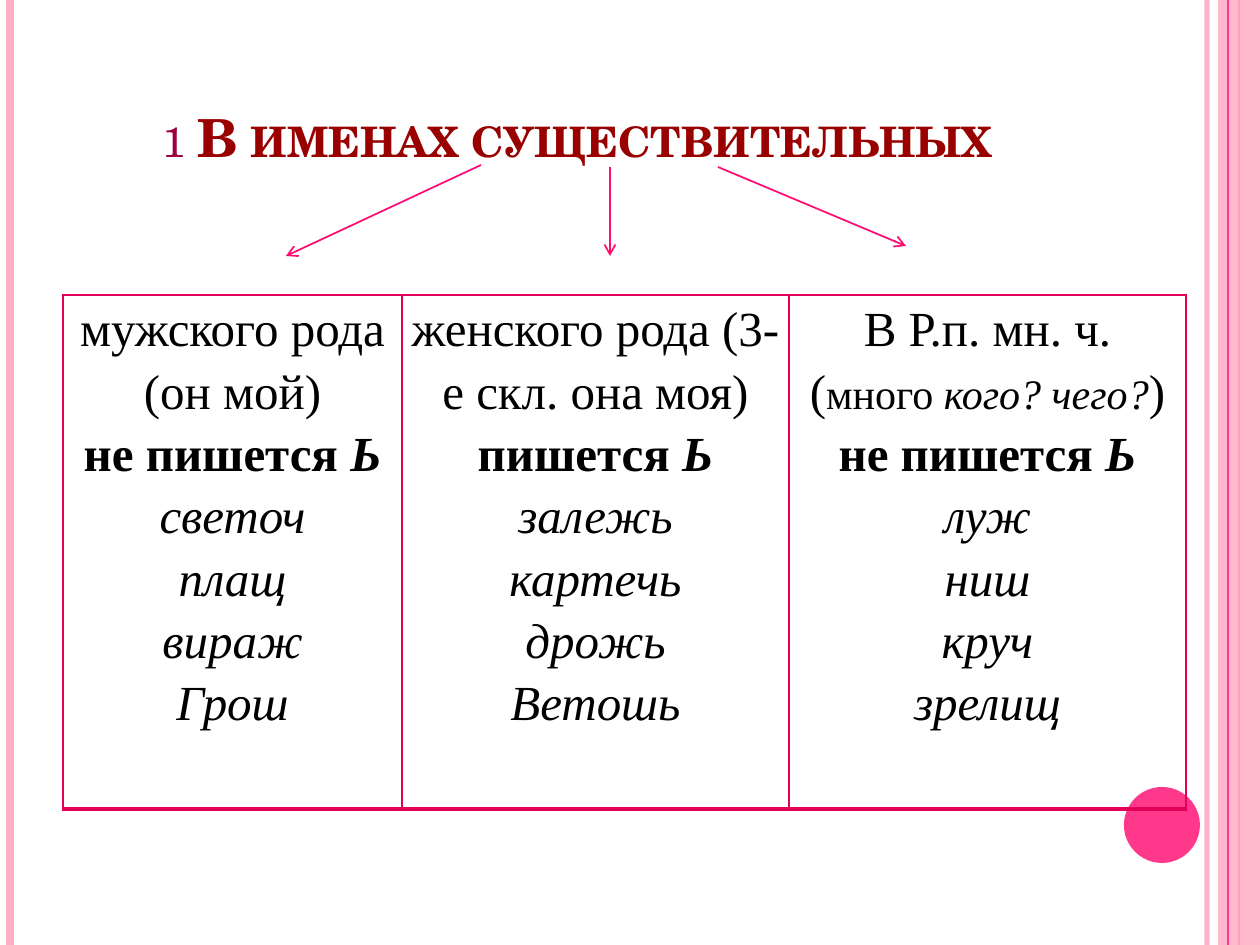
"""Build a slide on the soft sign after sibilants in Russian nouns."""
from dataclasses import dataclass

import pptx
import pptx.dml.color
import pptx.enum.shapes
import pptx.enum.text
import pptx.oxml
import pptx.oxml.ns
import pptx.util

EMU_PER_PX = 914400 / 126
SLIDE_WIDTH, SLIDE_HEIGHT = 1260, 945
COLORS = {
    "pale": "FFAFC5",
    "pink": "FF388C",
    "arrow": "FF0B72",
    "border": "E40059",
    "number": "9C0042",
    "title": "990000",
    "text": "000000",
}
TITLE_FONT, BODY_FONT = "TeX Gyre Schola", "Times New Roman"
CENTER = pptx.enum.text.PP_ALIGN.CENTER


@dataclass(frozen=True)
class Line:
    start: tuple[int, int]
    end: tuple[int, int]
    color: str
    width: float
    opacity: int = 100
    arrow: bool = False


@dataclass(frozen=True)
class Panel:
    kind: pptx.enum.shapes.MSO_SHAPE
    box: tuple[int, int, int, int]
    color: str
    opacity: int = 100


@dataclass(frozen=True)
class Span:
    text: str
    size: int = 28
    bold: bool = False
    italic: bool = False
    color: str = "text"
    font: str = BODY_FONT
    small_caps: bool = False


@dataclass(frozen=True)
class Column:
    width: int
    heading: list[list[Span]]
    rule: str
    examples: list[str]

    def paragraphs(self) -> list[list[Span]]:
        rule = [Span(self.rule, bold=True), Span("Ь", bold=True, italic=True)]
        return [*self.heading, rule, *([Span(word, italic=True)] for word in self.examples)]


def vertical(x: int, color: str, width: float, opacity: int = 100) -> Line:
    return Line((x, 0), (x, SLIDE_HEIGHT), color, width, opacity)


BACKGROUND = [
    vertical(1207, "pale", 3, 93),
    vertical(10, "pale", 4.5),
    vertical(1239, "pink", 1.5),
    Panel(pptx.enum.shapes.MSO_SHAPE.RECTANGLE, (1218, 0, 42, SLIDE_HEIGHT), "pale", 87),
    vertical(1228, "pink", 0.75),
    Panel(pptx.enum.shapes.MSO_SHAPE.OVAL, (1124, 787, 76, 76), "pink"),
]
TITLE = [
    Span("1 ", 30, color="number", font=TITLE_FONT, small_caps=True),
    Span("В именах существительных", 30, True, color="title", font=TITLE_FONT, small_caps=True),
]
COLUMNS = [
    Column(339, [[Span("мужского рода")], [Span("(он мой)")]], "не пишется ",
           ["светоч", "плащ", "вираж", "Грош"]),
    Column(387, [[Span("женского рода (3-е скл. она моя)")]], "пишется ",
           ["залежь", "картечь", "дрожь", "Ветошь"]),
    Column(397, [[Span("В Р.п. мн. ч.")],
                 [Span("("), Span("много ", 24), Span("кого? чего?", 24, italic=True), Span(")")]],
           "не пишется ", ["луж", "ниш", "круч", "зрелищ"]),
]
ARROWS = [
    Line((481, 165), (286, 256), "arrow", 1, arrow=True),
    Line((610, 167), (610, 256), "arrow", 1, arrow=True),
    Line((718, 167), (906, 246), "arrow", 1, arrow=True),
]


def px(*lengths: int) -> list[pptx.util.Emu]:
    return [pptx.util.Emu(round(length * EMU_PER_PX)) for length in lengths]


def rgb(color: str) -> pptx.dml.color.RGBColor:
    return pptx.dml.color.RGBColor.from_string(COLORS[color])


def add_child(parent, tag: str, **attributes: str):
    child = pptx.oxml.ns.qn(tag)
    element = parent.makeelement(child, attributes)
    parent.append(element)
    return element


def paint(fill, color: str, opacity: int) -> None:
    fill.solid()
    fill.fore_color.rgb = rgb(color)
    if opacity < 100:
        color_element = fill._xPr.find(".//" + pptx.oxml.ns.qn("a:srgbClr"))
        add_child(color_element, "a:alpha", val=str(opacity * 1000))


def add_line(slide, line: Line) -> None:
    connector = slide.shapes.add_connector(
        pptx.enum.shapes.MSO_CONNECTOR.STRAIGHT, *px(*line.start, *line.end))
    connector.line.width = pptx.util.Pt(line.width)
    paint(connector.line.fill, line.color, line.opacity)
    if line.arrow:
        add_child(connector.line._get_or_add_ln(), "a:tailEnd", type="arrow")
    add_child(connector._element.spPr, "a:effectLst")


def add_panel(slide, panel: Panel) -> None:
    shape = slide.shapes.add_shape(panel.kind, *px(*panel.box))
    shape.shadow.inherit = False
    paint(shape.fill, panel.color, panel.opacity)
    shape.line.fill.background()


def write_paragraph(paragraph, spans: list[Span]) -> None:
    paragraph.alignment = CENTER
    for span in spans:
        run = paragraph.add_run()
        run.text = span.text
        run.font.name = span.font
        run.font.size = pptx.util.Pt(span.size)
        run.font.bold, run.font.italic = span.bold, span.italic
        run.font.color.rgb = rgb(span.color)
        if span.small_caps:
            run._r.get_or_add_rPr().set("cap", "small")


def add_title(slide, spans: list[Span]) -> None:
    frame = slide.shapes.add_textbox(*px(63, 38, 1029, 136)).text_frame
    frame.word_wrap = True
    frame.vertical_anchor = pptx.enum.text.MSO_ANCHOR.BOTTOM
    write_paragraph(frame.paragraphs[0], spans)


def add_borders(cell) -> None:
    properties = cell._tc.get_or_add_tcPr()
    for side, width in {"L": 1, "R": 1, "T": 1, "B": 2}.items():
        border = add_child(properties, f"a:ln{side}", w=str(pptx.util.Pt(width)))
        fill = add_child(border, "a:solidFill")
        add_child(fill, "a:srgbClr", val=COLORS["border"])


def add_table(slide, columns: list[Column]) -> None:
    width = sum(column.width for column in columns)
    table = slide.shapes.add_table(1, len(columns), *px(63, 295, width, 514)).table
    table.first_row = table.horz_banding = False
    for index, column in enumerate(columns):
        table.columns[index].width = px(column.width)[0]
        cell = table.cell(0, index)
        cell.margin_left, cell.margin_right, cell.margin_top, cell.margin_bottom = px(9, 9, 0, 0)
        add_borders(cell)
        cell.fill.background()
        frame = cell.text_frame
        for position, spans in enumerate(column.paragraphs()):
            paragraph = frame.add_paragraph() if position else frame.paragraphs[0]
            paragraph.line_spacing = 1.15
            write_paragraph(paragraph, spans)


def main() -> None:
    presentation = pptx.Presentation()
    presentation.slide_width, presentation.slide_height = px(SLIDE_WIDTH, SLIDE_HEIGHT)
    slide = presentation.slides.add_slide(presentation.slide_layouts[6])
    for item in BACKGROUND:
        add_line(slide, item) if isinstance(item, Line) else add_panel(slide, item)
    add_title(slide, TITLE)
    add_table(slide, COLUMNS)
    for arrow in ARROWS:
        add_line(slide, arrow)
    presentation.save("out.pptx")


if __name__ == "__main__":
    main()
